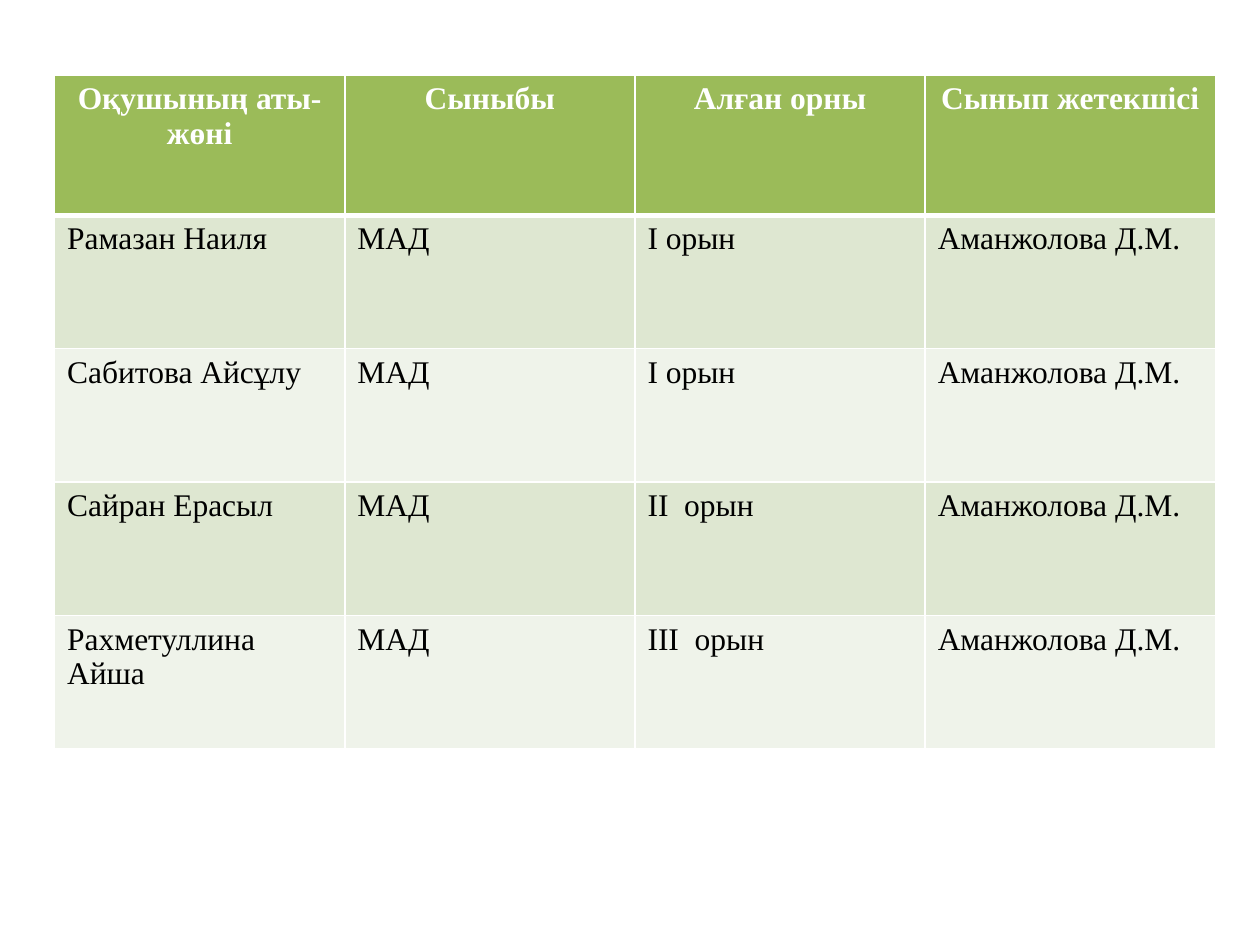
import dataclasses

import lxml.etree
import pptx
import pptx.dml.color
import pptx.enum.text
import pptx.oxml.ns
import pptx.util

Cm = pptx.util.Cm
Pt = pptx.util.Pt
ALIGN = pptx.enum.text.PP_ALIGN


@dataclasses.dataclass(frozen=True)
class Theme:
    font: str = "Times New Roman"
    size: int = 18
    head: str = "9BBB59"
    bands: tuple = ("DEE7D1", "EFF3EA")
    light: str = "FFFFFF"
    dark: str = "000000"
    thin: int = 1
    thick: int = 3


THEME = Theme()
TITLES = ["Оқушының аты- жөні", "Сыныбы", "Алған орны", "Сынып жетекшісі"]
GROUP = "МАД"
TUTOR = "Аманжолова Д.М."
PUPILS = [
    ("Рамазан Наиля", "І орын"),
    ("Сабитова Айсұлу", "І орын"),
    ("Сайран Ерасыл", "ІІ  орын"),
    ("Рахметуллина Айша", "ІІІ  орын"),
]


def rgb(code):
    return pptx.dml.color.RGBColor.from_string(code)


def write(frame, text, color=THEME.dark, bold=False, align=ALIGN.LEFT):
    para = frame.paragraphs[0]
    para.alignment = align
    run = para.add_run()
    run.text = text
    run.font.name = THEME.font
    run.font.size = Pt(THEME.size)
    run.font.bold = bold
    run.font.color.rgb = rgb(color)


def edge(cell, top, bottom):
    qn = pptx.oxml.ns.qn
    props = cell._tc.get_or_add_tcPr()
    widths = {"lnL": THEME.thin, "lnR": THEME.thin, "lnT": top, "lnB": bottom}
    for spot, (side, width) in enumerate(widths.items()):
        line = lxml.etree.Element(qn(f"a:{side}"), w=str(Pt(width)))
        fill = lxml.etree.SubElement(line, qn("a:solidFill"))
        lxml.etree.SubElement(fill, qn("a:srgbClr"), val=THEME.light)
        props.insert(spot, line)


def paint(cell, color):
    cell.fill.solid()
    cell.fill.fore_color.rgb = rgb(color)


def add_grid(slide, rows):
    count = len(rows)
    wide, head, tall = Cm(5.85), Cm(2.82), Cm(2.69)
    frame = slide.shapes.add_table(
        count, len(TITLES), Cm(1.1), Cm(1.52),
        wide * len(TITLES), head + tall * (count - 1))
    table = frame.table
    for col in table.columns:
        col.width = wide
    for i, row in enumerate(rows):
        table.rows[i].height = tall if i else head
        for j, text in enumerate(row):
            cell = table.cell(i, j)
            if i == 0:
                write(cell.text_frame, text, color=THEME.light,
                      bold=True, align=ALIGN.CENTER)
                paint(cell, THEME.head)
            else:
                write(cell.text_frame, text)
                paint(cell, THEME.bands[(i - 1) % 2])
            edge(cell, top=THEME.thick if i == 1 else THEME.thin,
                 bottom=THEME.thick if i == 0 else THEME.thin)


def main():
    deck = pptx.Presentation()
    deck.slide_width = Cm(25.4)
    deck.slide_height = Cm(19.05)
    slide = deck.slides.add_slide(deck.slide_layouts[6])
    body = [(name, GROUP, place, TUTOR) for name, place in PUPILS]
    add_grid(slide, [TITLES, *body])
    deck.save("out.pptx")


if __name__ == "__main__":
    main()
